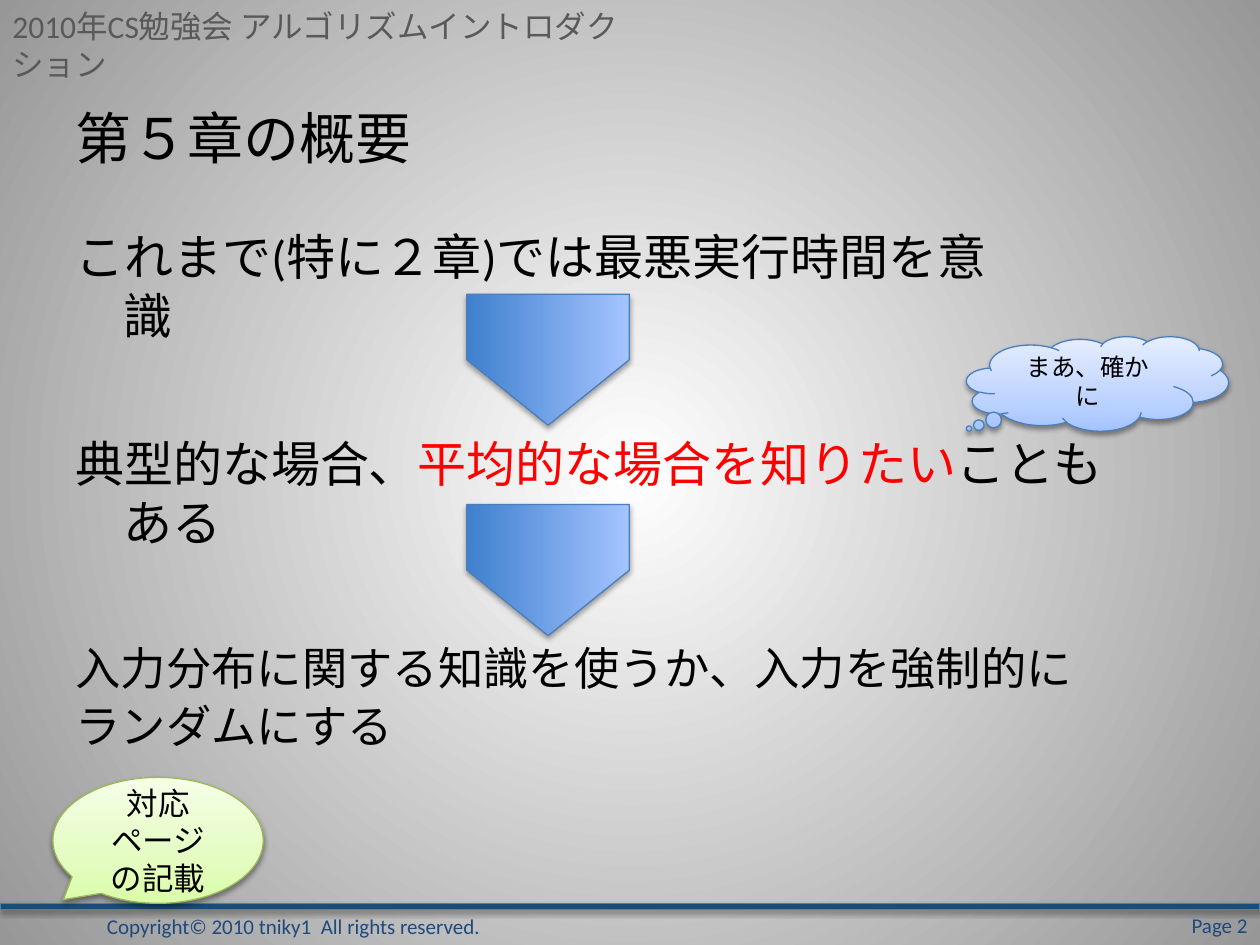
from lxml import etree
from pptx import Presentation
from pptx.dml.color import RGBColor
from pptx.enum.shapes import MSO_SHAPE
from pptx.enum.text import MSO_ANCHOR, MSO_AUTO_SIZE, PP_ALIGN
from pptx.oxml.ns import qn
from pptx.util import Inches, Pt

RECTANGLE = MSO_SHAPE.RECTANGLE
PENTAGON = MSO_SHAPE.PENTAGON
OVAL_CALLOUT = MSO_SHAPE.OVAL_CALLOUT
CLOUD_CALLOUT = MSO_SHAPE.CLOUD_CALLOUT
LEFT, CENTER, RIGHT = PP_ALIGN.LEFT, PP_ALIGN.CENTER, PP_ALIGN.RIGHT
TOP, MIDDLE = MSO_ANCHOR.TOP, MSO_ANCHOR.MIDDLE
NO_AUTOSIZE = MSO_AUTO_SIZE.NONE

THEME = {
    "font": "Calibri",
    "ink": "000000",
    "accent": "FF0000",
    "header": "595959",
    "navy": "1F497D",
    "blue_line": "4B7EBC",
    "green_line": "98B955",
    "backdrop": [(0, "FFFFFF"), (100, "979797")],
    "arrow": [(0, "3F80CE"), (100, "A4C4FF")],
    "cloud": [(0, "A4C4FF"), (35, "BFD4FF"), (100, "E6EEFF")],
    "green": [(0, "DAFDA7"), (35, "E4FCC2"), (100, "F5FFE7")],
    "title_size": 32,
    "body_size": 28,
    "conclusion_size": 25.9,
    "header_size": 18,
    "thought_size": 14,
    "footer_size": 12,
}


def paint_gradient(fill, properties, stops, radial=False):
    fill.gradient()
    gradient = properties.find(qn("a:gradFill"))
    for child in list(gradient):
        gradient.remove(child)
    stop_list = etree.SubElement(gradient, qn("a:gsLst"))
    for position, color in stops:
        stop = etree.SubElement(stop_list, qn("a:gs"), pos=str(position * 1000))
        etree.SubElement(stop, qn("a:srgbClr"), val=color)
    if radial:
        route = etree.SubElement(gradient, qn("a:path"), path="circle")
        etree.SubElement(route, qn("a:fillToRect"), l="50000", t="50000", r="50000", b="50000")
    else:
        etree.SubElement(gradient, qn("a:lin"), ang="16200000", scaled="0")


def write_text(box, paragraphs, size, color, align=LEFT, anchor=TOP, hanging=False):
    frame = box.text_frame
    frame.word_wrap = True
    frame.auto_size = NO_AUTOSIZE
    frame.vertical_anchor = anchor
    for index, spans in enumerate(paragraphs):
        para = frame.paragraphs[0] if index == 0 else frame.add_paragraph()
        para.alignment = align
        para.space_before = Pt(size * 0.2 if index else 0)
        if hanging:
            properties = para._p.get_or_add_pPr()
            properties.set("marL", str(Inches(0.38)))
            properties.set("indent", str(-Inches(0.38)))
            etree.SubElement(properties, qn("a:buNone"))
        para.font.name = THEME["font"]
        para.font.size = Pt(size)
        para.font.color.rgb = RGBColor.from_string(color)
        for text, span_color in spans:
            span = para.add_run()
            span.text = text
            if span_color != color:
                span.font.color.rgb = RGBColor.from_string(span_color)


deck = Presentation()
deck.slide_width, deck.slide_height = Inches(10), Inches(7.5)
page = deck.slides.add_slide(deck.slide_layouts[1])
ink = THEME["ink"]

backdrop = page.background.fill
backdrop.solid()
background_properties = page._element.cSld.find(qn("p:bg")).find(qn("p:bgPr"))
paint_gradient(backdrop, background_properties, THEME["backdrop"], radial=True)

SHAPES = [
    (RECTANGLE, (0, 7.17, 10, 0.05), 0, None, "blue_line", 35, 1.8, None),
    (OVAL_CALLOUT, (0.42, 6.17, 1.67, 1), 0, "green", "green_line", 38, 1.6,
     ("対応ページの記載", THEME["header_size"], (-0.45, 0.47))),
    (CLOUD_CALLOUT, (7.67, 2.67, 2.08, 0.75), 0, "cloud", "blue_line", 38, 1.6,
     ("まあ、確かに", THEME["thought_size"], (-0.49, 0.475))),
    (PENTAGON, (3.83, 2.21, 1.04, 1.29), 90, "arrow", "blue_line", 35, 1.8, None),
    (PENTAGON, (3.83, 3.88, 1.04, 1.29), 90, "arrow", "blue_line", 35, 1.8, None),
]
for kind, place, rotation, gradient_name, line_name, opacity, distance, callout in SHAPES:
    shape = page.shapes.add_shape(kind, *map(Inches, place))
    shape.rotation = rotation
    properties = shape._element.spPr
    if gradient_name:
        paint_gradient(shape.fill, properties, THEME[gradient_name])
    else:
        shape.fill.solid()
        shape.fill.fore_color.rgb = RGBColor.from_string(THEME["navy"])
    shape.line.color.rgb = RGBColor.from_string(THEME[line_name])
    shape.line.width = Pt(0.75)
    shape.shadow.inherit = False
    shadow = etree.SubElement(
        properties.find(qn("a:effectLst")), qn("a:outerShdw"),
        blurRad=str(Pt(3.1)), dist=str(Pt(distance)), dir="5400000", rotWithShape="0")
    shadow_color = etree.SubElement(shadow, qn("a:srgbClr"), val=ink)
    etree.SubElement(shadow_color, qn("a:alpha"), val=str(opacity * 1000))
    if callout:
        text, size, tip = callout
        shape.adjustments[0], shape.adjustments[1] = tip
        write_text(shape, [[(text, ink)]], size, ink, CENTER, MIDDLE)

LABELS = [
    ("Copyright© 2010 tniky1  All rights reserved.", (0.75, 7.2, 5.42, 0.33), "footer_size", "navy", LEFT),
    ("Page 2", (8.25, 7.19, 1.75, 0.33), "footer_size", "navy", RIGHT),
    ("2010年CS勉強会 アルゴリズムイントロダクション", (0, 0.01, 5.42, 0.4), "header_size", "header", LEFT),
]
for text, place, size_name, color_name, align in LABELS:
    label = page.shapes.add_textbox(*map(Inches, place))
    color = THEME[color_name]
    write_text(label, [[(text, color)]], THEME[size_name], color, align)

title = page.shapes.title
title.left, title.top, title.width, title.height = map(Inches, (0.5, 0.67, 9, 0.83))
write_text(title, [[("第５章の概要", ink)]], THEME["title_size"], ink, anchor=MIDDLE)

premise = page.placeholders[1]
premise.left, premise.top, premise.width, premise.height = map(Inches, (0.5, 1.75, 7.67, 0.75))
write_text(premise, [[("これまで(特に２章)では最悪実行時間を意識", ink)]], THEME["body_size"], ink, hanging=True)

average_case = page.shapes.add_textbox(*map(Inches, (0.5, 3.39, 8.42, 0.75)))
write_text(average_case, [[
    ("典型的な場合、", ink),
    ("平均的な場合を知りたい", THEME["accent"]),
    ("こともある", ink),
]], THEME["body_size"], ink, hanging=True)

conclusion = page.shapes.add_textbox(*map(Inches, (0.5, 5.08, 8.17, 1)))
write_text(conclusion, [
    [("入力分布に関する知識を使うか、入力を強制的に", ink)],
    [("ランダムにする", ink)],
], THEME["conclusion_size"], ink, hanging=True)
for para in conclusion.text_frame.paragraphs:
    para.line_spacing = 0.9

deck.save("out.pptx")
